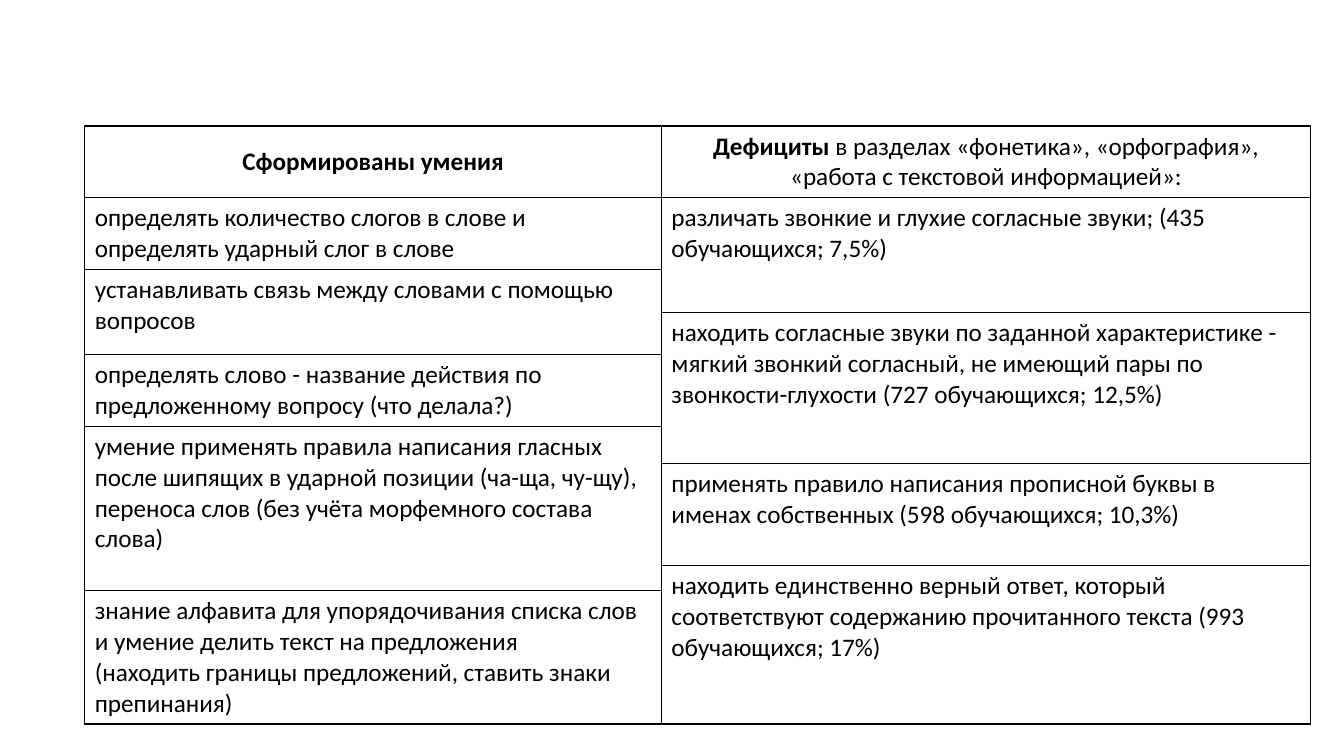
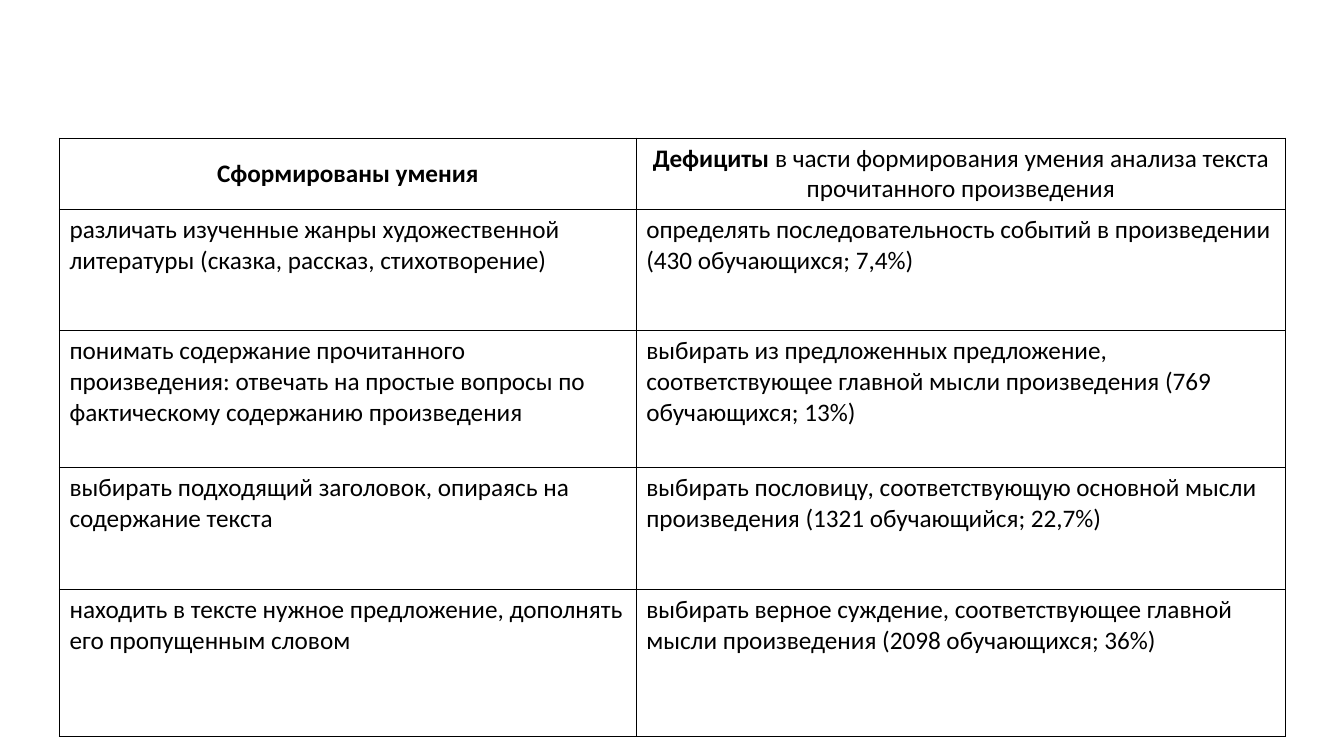
from dataclasses import dataclass

from lxml import etree
from pptx import Presentation
from pptx.dml.color import RGBColor
from pptx.enum import text
from pptx.oxml.ns import qn
from pptx.util import Inches, Pt

# Shared style
FONT, SIZE, INK = "Calibri", 18, "000000"
BORDER_PT = 1
COL_WIDTHS = (5.72, 6.44)
HEADER_HEIGHT = 0.71
SKILLS = "Сформированы умения"
DEFICITS = "Дефициты "


@dataclass
class Entry:
    """A body cell: its text and the number of rows it covers."""
    text: str
    rows: int = 1


@dataclass
class SkillTable:
    left: float
    top: float
    deficit_scope: str
    row_heights: tuple[float, ...]
    skills: list[Entry]
    deficits: list[Entry]


TABLES = [
    SkillTable(
        0.84, 1.25,
        "в разделах «фонетика», «орфография», «работа с текстовой информацией»:",
        (0.71, 0.43, 0.42, 0.71, 0.37, 1.01, 0.25, 1.32),
        [
            Entry("определять количество слогов в слове и определять ударный слог в слове"),
            Entry("устанавливать связь между словами с помощью вопросов", 2),
            Entry("определять слово - название действия по предложенному вопросу (что делала?)"),
            Entry("умение применять правила написания гласных после шипящих в ударной позиции "
                  "(ча-ща, чу-щу), переноса слов (без учёта морфемного состава слова)", 3),
            Entry("знание алфавита для упорядочивания списка слов и умение делить текст на "
                  "предложения\n(находить границы предложений, ставить знаки препинания)"),
        ],
        [
            Entry("различать звонкие и глухие согласные звуки; (435 обучающихся; 7,5%)", 2),
            Entry("находить согласные звуки по заданной характеристике - мягкий звонкий согласный, "
                  "не имеющий пары по звонкости-глухости (727 обучающихся; 12,5%)", 3),
            Entry("применять правило написания прописной буквы в именах собственных "
                  "(598 обучающихся; 10,3%)"),
            Entry("находить единственно верный ответ, который соответствуют содержанию "
                  "прочитанного текста (993 обучающихся; 17%)", 2),
        ],
    ),
    SkillTable(
        0.59, 1.37,
        "в части формирования умения анализа текста прочитанного произведения",
        (1.2, 1.36, 1.21, 1.46),
        [
            Entry("различать изученные жанры художественной литературы "
                  "(сказка, рассказ, стихотворение)"),
            Entry("понимать содержание прочитанного произведения: отвечать на простые вопросы "
                  "по фактическому содержанию произведения"),
            Entry("выбирать подходящий заголовок, опираясь на содержание текста"),
            Entry("находить в тексте нужное предложение, дополнять его пропущенным словом"),
        ],
        [
            Entry("определять последовательность событий в произведении (430 обучающихся; 7,4%)"),
            Entry("выбирать из предложенных предложение, соответствующее главной мысли "
                  "произведения (769 обучающихся; 13%)"),
            Entry("выбирать пословицу, соответствующую основной мысли произведения "
                  "(1321 обучающийся; 22,7%)"),
            Entry("выбирать верное суждение, соответствующее главной мысли произведения "
                  "(2098 обучающихся; 36%)"),
        ],
    ),
]


def rgb(value: str) -> RGBColor:
    return RGBColor.from_string(value)


def format_run(r, bold: bool) -> None:
    r.font.name, r.font.size, r.font.bold = FONT, Pt(SIZE), bold
    r.font.color.rgb = rgb(INK)


def style_cell(cell) -> None:
    """Clear the fill and outline all four sides."""
    cell.fill.background()
    tc_pr = cell._tc.get_or_add_tcPr()
    for i, side in enumerate(("lnL", "lnR", "lnT", "lnB")):
        ln = etree.Element(qn(f"a:{side}"), w=str(Pt(BORDER_PT)))
        fill = etree.SubElement(ln, qn("a:solidFill"))
        etree.SubElement(fill, qn("a:srgbClr"), val=INK)
        tc_pr.insert(i, ln)


def fill_header(cell, title: str, scope: str = "") -> None:
    cell.vertical_anchor = text.MSO_ANCHOR.MIDDLE
    p = cell.text_frame.paragraphs[0]
    p.text = title
    p.alignment = text.PP_ALIGN.CENTER
    format_run(p.runs[0], bold=True)
    if scope:
        r = p.add_run()
        r.text = scope
        format_run(r, bold=False)


def fill_column(table, col: int, entries: list[Entry]) -> None:
    row = 1
    for entry in entries:
        cell = table.cell(row, col)
        if entry.rows > 1:
            cell.merge(table.cell(row + entry.rows - 1, col))
        cell.text_frame.text = entry.text
        for p in cell.text_frame.paragraphs:
            format_run(p.runs[0], bold=False)
        row += entry.rows


def add_skill_table(s, data: SkillTable) -> None:
    heights = (HEADER_HEIGHT, *data.row_heights)
    table = s.shapes.add_table(
        len(heights), len(COL_WIDTHS), Inches(data.left), Inches(data.top),
        Inches(sum(COL_WIDTHS)), Inches(sum(heights))).table
    table.first_row = table.horz_banding = False
    for column, width in zip(table.columns, COL_WIDTHS):
        column.width = Inches(width)
    for row, height in zip(table.rows, heights):
        row.height = Inches(height)
    for cell in table.iter_cells():
        style_cell(cell)
    fill_header(table.cell(0, 0), SKILLS)
    fill_header(table.cell(0, 1), DEFICITS, data.deficit_scope)
    fill_column(table, 0, data.skills)
    fill_column(table, 1, data.deficits)


def main() -> None:
    prs = Presentation()
    prs.slide_width, prs.slide_height = Inches(13.33), Inches(7.5)
    for data in TABLES:
        add_skill_table(prs.slides.add_slide(prs.slide_layouts[6]), data)
    prs.save("out.pptx")


if __name__ == "__main__":
    main()
